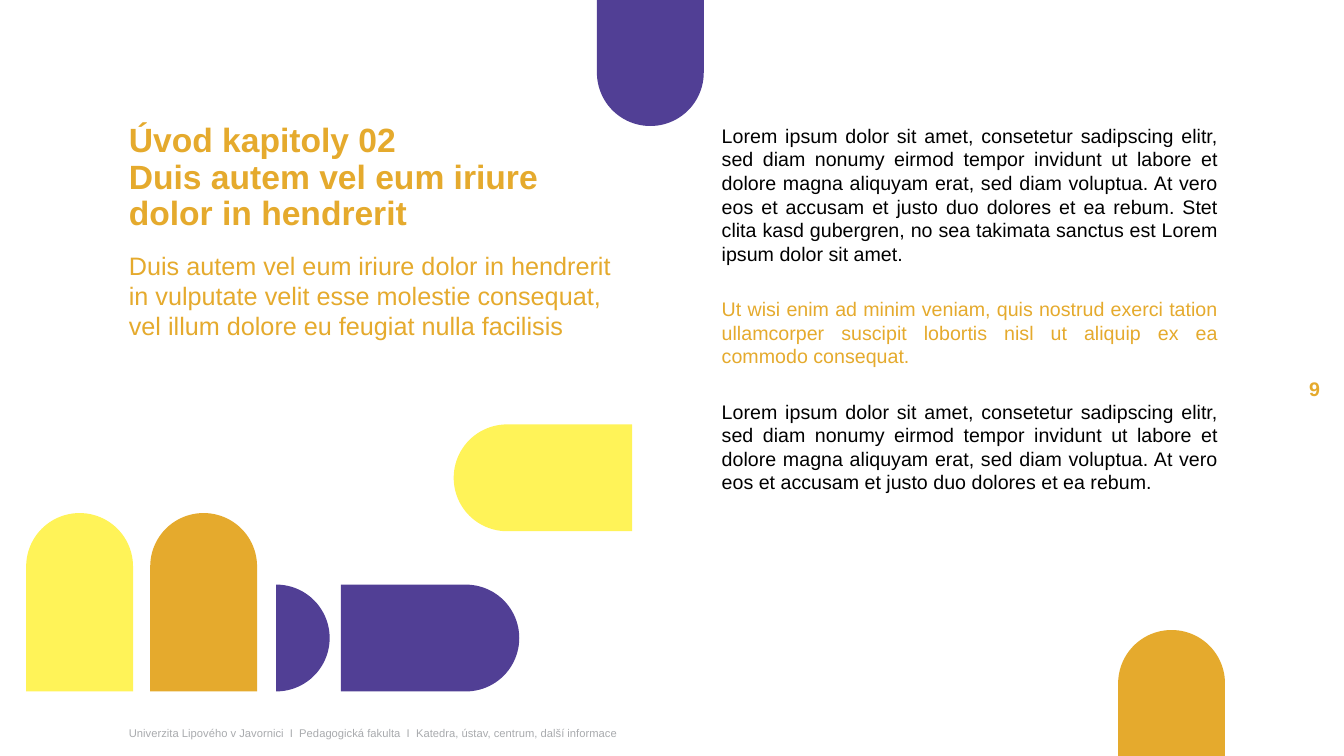
import math

from pptx import Presentation
from pptx.dml.color import RGBColor
from pptx.enum.shapes import MSO_SHAPE
from pptx.enum.text import MSO_ANCHOR, PP_ALIGN
from pptx.util import Inches, Pt

GOLD = RGBColor(0xE5, 0xAA, 0x2D)
YELLOW = RGBColor(0xFF, 0xF3, 0x58)
PURPLE = RGBColor(0x51, 0x3F, 0x95)
GREY = RGBColor(0xA9, 0xAB, 0xAE)
BLACK = RGBColor(0, 0, 0)

ARCH = MSO_SHAPE.ROUND_2_SAME_RECTANGLE
TOP, MIDDLE = MSO_ANCHOR.TOP, MSO_ANCHOR.MIDDLE
LEFT, RIGHT, JUSTIFY = PP_ALIGN.LEFT, PP_ALIGN.RIGHT, PP_ALIGN.JUSTIFY

FONT = "Arial"
SPAN = 1.06  # width of every arch
TALL, SHORT = 1.77, 1.25  # arch lengths
COLUMN = 5.12
ROTATION = {"up": 0, "right": 90, "down": 180, "left": 270}

LOREM = ("Lorem ipsum dolor sit amet, consetetur sadipscing elitr, sed diam nonumy "
         "eirmod tempor invidunt ut labore et dolore magna aliquyam erat, sed diam "
         "voluptua. At vero eos et accusam et justo duo dolores et ea rebum.")
LOREM_END = (" Stet clita kasd gubergren, no sea takimata sanctus est Lorem ipsum "
             "dolor sit amet.")
UT_WISI = ("Ut wisi enim ad minim veniam, quis nostrud exerci tation ullamcorper "
           "suscipit lobortis nisl ut aliquip ex ea commodo consequat.")
SUBTITLE = ("Duis autem vel eum iriure dolor in hendrerit in vulputate velit esse "
            "molestie consequat, vel illum dolore eu feugiat nulla facilisis")
FOOTER = ("Univerzita Lipového v Javornici  I  Pedagogická fakulta  I  "
          "Katedra, ústav, centrum, další informace")


def add_text(slide, box, paragraphs, size, color=GOLD, bold=False, align=LEFT,
             anchor=TOP, wrap=True, line=None, before=0, gap=None):
    """Each paragraph is a string or a (string, color) pair; gap is the space between them."""
    tf = slide.shapes.add_textbox(*map(Inches, box)).text_frame
    tf.word_wrap = wrap
    tf.vertical_anchor = anchor
    for i, item in enumerate(paragraphs):
        text, shade = item if isinstance(item, tuple) else (item, color)
        p = tf.add_paragraph() if i else tf.paragraphs[0]
        p.text = text
        p.alignment = align
        p.line_spacing = line
        p.space_before = Pt(gap if i and gap else before)
        for r in p.runs:
            r.font.name = FONT
            r.font.size = Pt(size)
            r.font.bold = bold
            r.font.color.rgb = shade


def paint(sp, color):
    sp.shadow.inherit = False
    sp.fill.solid()
    sp.fill.fore_color.rgb = color
    sp.line.fill.background()


def add_arch(slide, x, y, length, direction, color):
    """Place an arch whose visible top left corner is x, y."""
    if direction in ("left", "right"):
        shift = (length - SPAN) / 2
        x, y = x + shift, y - shift
    sp = slide.shapes.add_shape(ARCH, *map(Inches, (x, y, SPAN, length)))
    sp.adjustments[0] = 0.5
    sp.adjustments[1] = 0
    sp.rotation = ROTATION[direction]
    paint(sp, color)


def add_half_disc(slide, x, y, color, steps=60):
    radius = SPAN / 2
    angles = [math.pi * (i / steps - 0.5) for i in range(steps + 1)]
    points = [(Inches(x + radius * math.cos(a)), Inches(y + radius + radius * math.sin(a)))
              for a in angles]
    builder = slide.shapes.build_freeform(*points[0])
    builder.add_line_segments(points[1:])
    paint(builder.convert_to_shape(), color)


def add_arch_group(slide, x, y):
    add_arch(slide, x + 1.23, y + 0.88, TALL, "up", GOLD)
    add_arch(slide, x, y + 0.88, TALL, "up", YELLOW)
    add_half_disc(slide, x + 2.48, y + 1.59, PURPLE)
    add_arch(slide, x + 3.12, y + 1.59, TALL, "right", PURPLE)
    add_arch(slide, x + 4.24, y, TALL, "left", YELLOW)


def add_heading(slide, x, y):
    add_text(slide, (x, y, COLUMN, 1.19),
             ["Úvod kapitoly 02\vDuis autem vel eum iriure dolor in hendrerit"],
             24, bold=True, line=0.9)
    add_text(slide, (x, y + 1.25, COLUMN, 1.01), [SUBTITLE], 18, before=3)


def add_body(slide, x, y):
    add_text(slide, (x, y, COLUMN, 3.8),
             [LOREM + LOREM_END, (UT_WISI, GOLD), LOREM],
             14, BLACK, align=JUSTIFY, before=3, gap=22.8)


def add_footer(slide, x, y):
    add_text(slide, (x, y, 5.49, 0.24), [FOOTER], 8, GREY, anchor=MIDDLE)


def add_page_number(slide, x, y):
    add_text(slide, (x, y, 0.44, 0.34), ["9"], 14, bold=True, align=RIGHT,
             anchor=MIDDLE, wrap=False)


def main():
    prs = Presentation()
    prs.slide_width, prs.slide_height = Inches(13.33), Inches(7.5)
    slide = prs.slides.add_slide(prs.slide_layouts[6])
    add_arch_group(slide, 0.26, 4.21)
    add_heading(slide, 1.18, 1.18)
    add_footer(slide, 1.18, 7.15)
    add_page_number(slide, 12.75, 3.69)
    add_body(slide, 7.06, 1.18)
    add_arch(slide, 5.92, 0, SHORT, "down", PURPLE)
    add_arch(slide, 11.09, 7.5 - SHORT, SHORT, "up", GOLD)
    prs.save("out.pptx")


if __name__ == "__main__":
    main()
